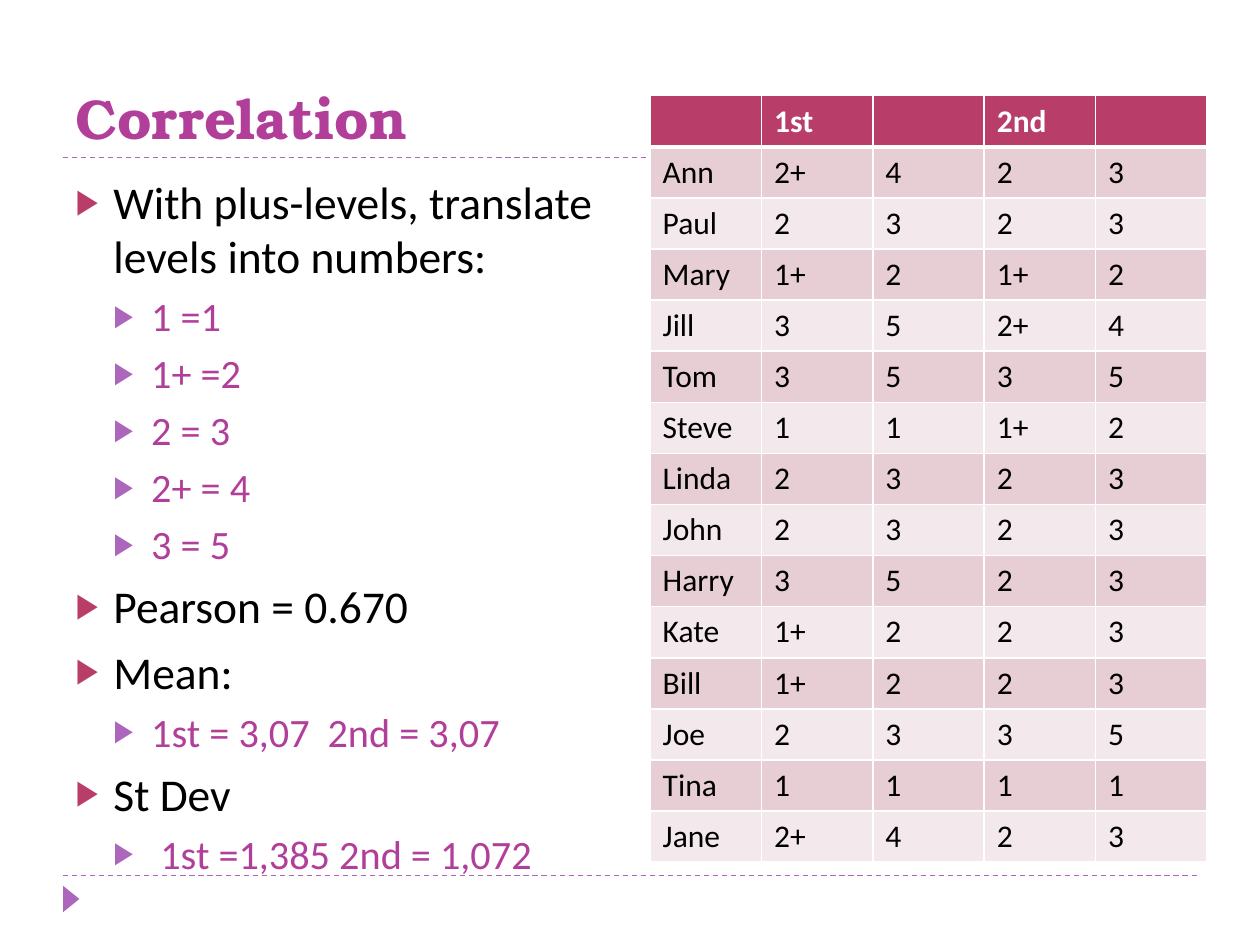
from lxml import etree
from pptx import Presentation
from pptx.dml.color import RGBColor
from pptx.enum.dml import MSO_LINE
from pptx.enum.shapes import MSO_CONNECTOR, MSO_SHAPE
from pptx.enum.text import MSO_ANCHOR, MSO_AUTO_SIZE, PP_ALIGN
from pptx.oxml.ns import qn
from pptx.util import Inches, Pt

STRAIGHT = MSO_CONNECTOR.STRAIGHT
TRIANGLE = MSO_SHAPE.ISOSCELES_TRIANGLE
DASH = MSO_LINE.DASH
BOTTOM, TOP = MSO_ANCHOR.BOTTOM, MSO_ANCHOR.TOP
LEFT = PP_ALIGN.LEFT
NO_AUTOFIT = MSO_AUTO_SIZE.NONE

BLACK = RGBColor(0x00, 0x00, 0x00)
WHITE = RGBColor(0xFF, 0xFF, 0xFF)
MAGENTA = RGBColor(0xB1, 0x3F, 0x9A)
CRIMSON = RGBColor(0xB8, 0x3D, 0x68)
LILAC = RGBColor(0xAC, 0x66, 0xBB)
DARK_BAND = RGBColor(0xE6, 0xCE, 0xD4)
LIGHT_BAND = RGBColor(0xF3, 0xE8, 0xEB)

TITLE_FONT = "TeX Gyre Bonum"
BODY_FONT = "Calibri"

# Per outline level: text size, text colour, bullet colour, space before
LEVEL_STYLES = [(26, BLACK, CRIMSON, 6), (23, MAGENTA, LILAC, 5)]
OUTLINE = [
    (0, "With plus-levels, translate levels into numbers:"),
    (1, "1 =1"),
    (1, "1+ =2"),
    (1, "2 = 3"),
    (1, "2+ = 4"),
    (1, "3 = 5"),
    (0, "Pearson = 0.670"),
    (0, "Mean:"),
    (1, "1st = 3,07\t2nd = 3,07"),
    (0, "St Dev"),
    (1, " 1st =1,385 2nd = 1,072"),
]

SCORES = {"1": "1", "1+": "2", "2": "3", "2+": "4", "3": "5"}
HEADER = ["", "1st", "", "2nd", ""]
RATINGS = [
    ("Ann", "2+", "2"), ("Paul", "2", "2"), ("Mary", "1+", "1+"),
    ("Jill", "3", "2+"), ("Tom", "3", "3"), ("Steve", "1", "1+"),
    ("Linda", "2", "2"), ("John", "2", "2"), ("Harry", "3", "2"),
    ("Kate", "1+", "2"), ("Bill", "1+", "2"), ("Joe", "2", "3"),
    ("Tina", "1", "1"), ("Jane", "2+", "2"),
]


def place(shape, box):
    shape.left, shape.top, shape.width, shape.height = map(Inches, box)


def set_font(para, name, size, colour, bold=False):
    para.font.name = name
    para.font.size = Pt(size)
    para.font.color.rgb = colour
    para.font.bold = bold


def add_rule(page, left, top, width):
    rule = page.shapes.add_connector(
        STRAIGHT, Inches(left), Inches(top), Inches(left + width), Inches(top))
    rule.line.color.rgb = LILAC
    rule.line.width = Pt(0.75)
    rule.line.dash_style = DASH
    etree.SubElement(rule._element.spPr, qn("a:effectLst"))


def add_corner_marker(page, box):
    marker = page.shapes.add_shape(TRIANGLE, *map(Inches, box))
    marker.rotation = 90
    marker.shadow.inherit = False
    marker.fill.solid()
    marker.fill.fore_color.rgb = LILAC
    marker.line.fill.background()


def fill_title(title, box):
    place(title, box)
    frame = title.text_frame
    frame.text = "Correlation"
    frame.vertical_anchor = BOTTOM
    frame.auto_size = NO_AUTOFIT
    para = frame.paragraphs[0]
    para.alignment = LEFT
    set_font(para, TITLE_FONT, 32, MAGENTA, bold=True)


def set_bullet(para, level, colour):
    props = para._p.get_or_add_pPr()
    props.set("marL", str(Inches(0.3 * (level + 1))))
    props.set("indent", str(Inches(-0.3)))
    bullet_colour = etree.SubElement(props, qn("a:buClr"))
    etree.SubElement(bullet_colour, qn("a:srgbClr"), val=str(colour))
    etree.SubElement(props, qn("a:buSzPct"), val="76000")
    etree.SubElement(props, qn("a:buChar"), char="▶")


def fill_outline(body, box):
    place(body, box)
    frame = body.text_frame
    frame.text = "\n".join(text for _, text in OUTLINE)
    frame.vertical_anchor = TOP
    frame.auto_size = NO_AUTOFIT
    for para, (level, _) in zip(frame.paragraphs, OUTLINE):
        size, colour, bullet_colour, gap = LEVEL_STYLES[level]
        para.level = level
        set_bullet(para, level, bullet_colour)
        para.space_before = Pt(gap)
        set_font(para, BODY_FONT, size, colour)


def set_borders(cell, bottom, top):
    """Draw white borders; the side borders are always 1 pt."""
    props = cell._tc.get_or_add_tcPr()
    for side, width in (("L", 1), ("R", 1), ("T", top), ("B", bottom)):
        line = etree.SubElement(props, qn(f"a:ln{side}"), w=str(Pt(width)))
        fill = etree.SubElement(line, qn("a:solidFill"))
        etree.SubElement(fill, qn("a:srgbClr"), val=str(WHITE))


def add_ratings_table(page, box):
    rows = [HEADER] + [
        [name, first, SCORES[first], second, SCORES[second]]
        for name, first, second in RATINGS]
    table = page.shapes.add_table(
        len(rows), len(HEADER), *map(Inches, box)).table
    for row_index, row in enumerate(rows):
        is_header = row_index == 0
        band = DARK_BAND if row_index % 2 else LIGHT_BAND
        for column_index, text in enumerate(row):
            cell = table.cell(row_index, column_index)
            set_borders(cell, bottom=3 if is_header else 1,
                        top=3 if row_index == 1 else 1)
            cell.fill.solid()
            cell.fill.fore_color.rgb = CRIMSON if is_header else band
            cell.text = text
            set_font(cell.text_frame.paragraphs[0], BODY_FONT, 18,
                     WHITE if is_header else BLACK, bold=is_header)


def main():
    deck = Presentation()
    deck.slide_width, deck.slide_height = Inches(10), Inches(7.5)
    page = deck.slides.add_slide(deck.slide_layouts[1])
    for top in (6.95, 1.25):
        add_rule(page, 0.5, top, 9)
    add_corner_marker(page, (0.46, 7.07, 0.21, 0.13))
    fill_title(page.shapes.title, (0.5, 0.25, 4.58, 1))
    fill_outline(page.placeholders[1], (0.5, 1.33, 4.42, 5.57))
    add_ratings_table(page, (5.16, 0.76, 4.42, 6.08))
    deck.save("out.pptx")


if __name__ == "__main__":
    main()
